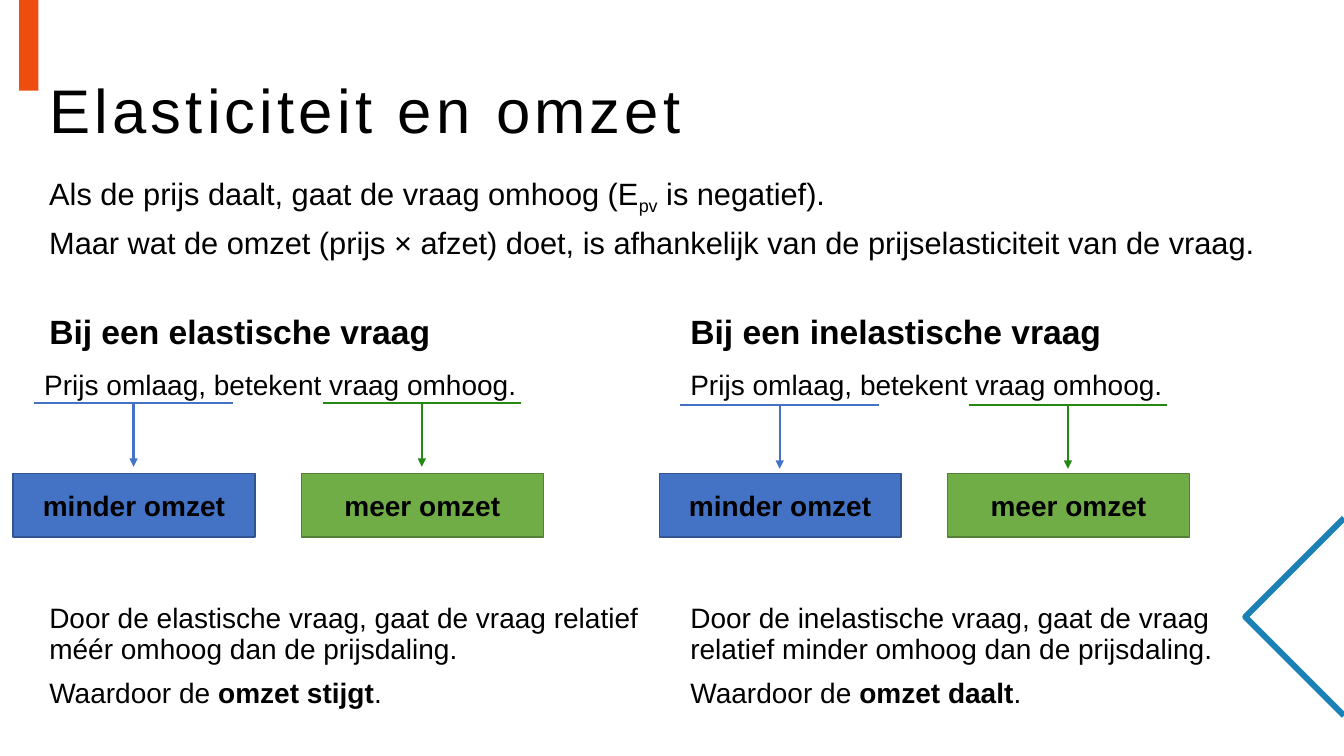
from dataclasses import dataclass

from lxml import etree
from pptx import Presentation
from pptx import util as u
from pptx.dml.color import RGBColor
from pptx.enum import shapes, text
from pptx.oxml.ns import qn

CELL = 0.1  # side of one grid cell in inches
COLS, ROWS = 133.33, 75
FONT = "Arial"
HEX = {
    "black": "000000", "orange": "ED4D0F", "teal": "1A80B6",
    "blue": "4472C4", "navy": "325491",
    "green": "70AD47", "moss": "538035", "leaf": "258812",
}


@dataclass(frozen=True)
class Bit:
    words: str
    bold: bool = False
    base: int = 0


@dataclass(frozen=True)
class Style:
    size: float
    before: float = 0
    lead: float = 1.0
    track: int = 0
    mid: bool = False


@dataclass(frozen=True)
class Branch:
    label: str
    fill: str
    edge: str
    rule: str


@dataclass(frozen=True)
class Panel:
    left: float   # column of heading and closing text
    start: float  # column of the price line
    rule: float   # row of the underlines
    kind: str
    effect: str
    result: str


TITLE = Style(44, lead=0.9, track=300, mid=True)
INTRO = Style(22, before=5)
HEAD = Style(24, before=10, lead=0.9)
LINE = Style(20, before=4)
BODY = Style(20, before=10, lead=0.9)

BRANCHES = [
    Branch("minder omzet", "blue", "navy", "blue"),
    Branch("meer omzet", "green", "moss", "leaf"),
]
PANELS = [
    Panel(3.9, 3.4, 40, "elastische", "gaat de vraag relatief méér", "omzet stijgt"),
    Panel(67.5, 67.5, 40.2, "inelastische", "gaat de vraag relatief minder", "omzet daalt"),
]
PITCH = 28.6           # columns between the branches of a panel
RULE, DROP = 19.7, 6.3  # underline width, arrow height
BOX_W, BOX_H, BOX_TOP = 24, 6.3, 47


def g(n: float) -> int:
    return u.Inches(n * CELL)


def rgb(name: str) -> RGBColor:
    return RGBColor.from_string(HEX[name])


def ink(run, size: float, bold: bool = False) -> None:
    run.font.name, run.font.size, run.font.bold = FONT, u.Pt(size), bold
    run.font.color.rgb = rgb("black")


def write(slide, x: float, y: float, w: float, h: float,
          paras: list[list[Bit]], style: Style) -> None:
    frame = slide.shapes.add_textbox(g(x), g(y), g(w), g(h)).text_frame
    frame.word_wrap = True
    if style.mid:
        frame.vertical_anchor = text.MSO_ANCHOR.MIDDLE
    frame.text = "\n".join(bits[0].words for bits in paras)
    for para, bits in zip(frame.paragraphs, paras):
        para.space_before, para.line_spacing = u.Pt(style.before), style.lead
        for bit in bits[1:]:
            para.add_run().text = bit.words
        for run, bit in zip(para.runs, bits):
            ink(run, style.size, bit.bold)
            props = run.font._element
            if bit.base:
                props.set("baseline", str(bit.base))
            if style.track:
                props.set("spc", str(style.track))


def block(slide, x: float, y: float, w: float, h: float, fill: str):
    shape = slide.shapes.add_shape(shapes.MSO_SHAPE.RECTANGLE, g(x), g(y), g(w), g(h))
    shape.shadow.inherit = False
    shape.fill.solid()
    shape.fill.fore_color.rgb = rgb(fill)
    shape.line.fill.background()
    return shape


def link(group, x1: float, y1: float, x2: float, y2: float,
         color: str, arrow: bool = False) -> None:
    line = group.shapes.add_connector(
        shapes.MSO_CONNECTOR.STRAIGHT, g(x1), g(y1), g(x2), g(y2))
    line.line.color.rgb, line.line.width = rgb(color), u.Pt(1.5)
    props = line._element.spPr
    if arrow:
        etree.SubElement(props.find(qn("a:ln")), qn("a:tailEnd"), type="triangle")
    etree.SubElement(props, qn("a:effectLst"))


def fork(slide, branch: Branch, x: float, y: float) -> None:
    # Result box
    box = block(slide, x - 2.1, BOX_TOP, BOX_W, BOX_H, branch.fill)
    box.line.color.rgb, box.line.width = rgb(branch.edge), u.Pt(1)
    frame = box.text_frame
    frame.text = branch.label
    frame.vertical_anchor = text.MSO_ANCHOR.MIDDLE
    para = frame.paragraphs[0]
    para.alignment = text.PP_ALIGN.CENTER
    ink(para.runs[0], 20, True)

    # Underline with arrow
    group = slide.shapes.add_group_shape()
    mid = x + RULE / 2
    link(group, x, y, x + RULE, y, branch.rule)
    link(group, mid, y, mid, y + DROP, branch.rule, arrow=True)


def column(slide, p: Panel) -> None:
    write(slide, p.left, 30.8, 61.8, 4.8, [[Bit(f"Bij een {p.kind} vraag", True)]], HEAD)
    write(slide, p.start, 36, 58.4, 7.1,
          [[Bit("Prijs omlaag, betekent vraag omhoog.")]], LINE)
    for i, branch in enumerate(BRANCHES):
        fork(slide, branch, p.start + i * PITCH, p.rule)
    write(slide, p.left, 59.5, 61.8, 11.5, [
        [Bit(f"Door de {p.kind} vraag, {p.effect} omhoog dan de prijsdaling.")],
        [Bit("Waardoor de "), Bit(p.result, True), Bit(".")],
    ], BODY)


def decor(slide) -> None:
    block(slide, 1.9, 0, 1.9, 9, "orange")
    tip, half = 61.2, 9.8
    pen = slide.shapes.build_freeform(g(COLS), g(tip - half))
    pen.add_line_segments(
        [(g(COLS - half), g(tip)), (g(COLS), g(tip + half))], close=False)
    wedge = pen.convert_to_shape()
    wedge.shadow.inherit = False
    wedge.fill.background()
    wedge.line.color.rgb, wedge.line.width = rgb("teal"), u.Pt(4.25)


def main() -> None:
    deck = Presentation()
    deck.slide_width, deck.slide_height = g(COLS), g(ROWS)
    slide = deck.slides.add_slide(deck.slide_layouts[6])

    decor(slide)

    # Title and introduction
    write(slide, 3.9, 4, 125.6, 14.5, [[Bit("Elasticiteit en omzet")]], TITLE)
    write(slide, 3.9, 16.8, 125.6, 10.8, [
        [Bit("Als de prijs daalt, gaat de vraag omhoog (E"),
         Bit("pv", base=-25000), Bit(" is negatief).")],
        [Bit("Maar wat de omzet (prijs × afzet) doet, is afhankelijk "
             "van de prijselasticiteit van de vraag.")],
    ], INTRO)

    # Elastic and inelastic demand
    for panel in PANELS:
        column(slide, panel)

    deck.save("out.pptx")


if __name__ == "__main__":
    main()
